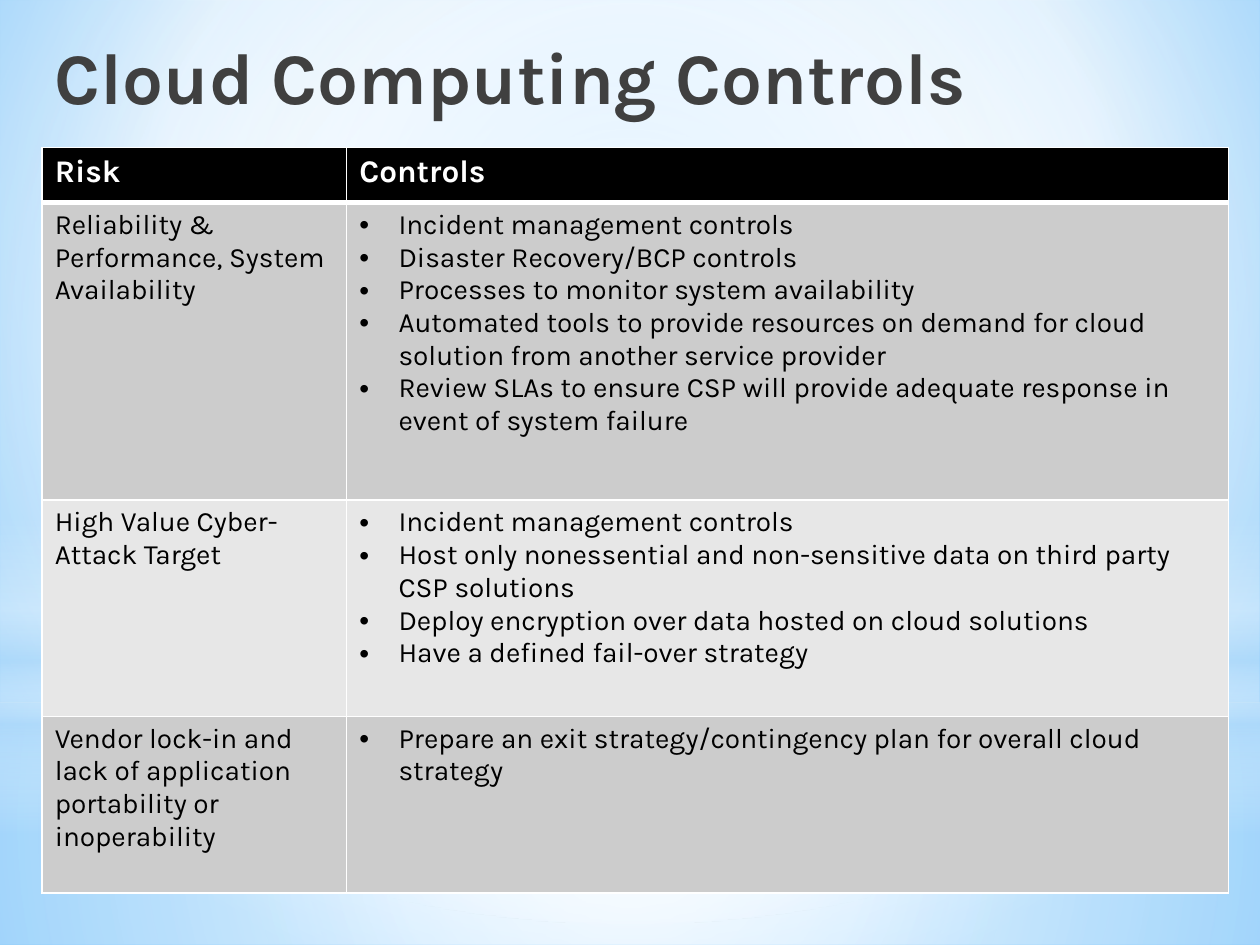
import pptx
import pptx.dml.color
import pptx.enum.shapes
import pptx.enum.text
import pptx.oxml
import pptx.oxml.ns
import pptx.util
from pptx.util import Cm

FONT = "Karla"
CENTRE = (50, 50, 50, 50)
SHAPES = pptx.enum.shapes.MSO_SHAPE
BACKDROP = [(0, "9ED5FF", 100), (60, "FFFFFF", 100), (100, "5BB9FF", 100)]
GLOWS = [
    (SHAPES.RECTANGLE, 14.17, 4.88, CENTRE,
     [(0, "FFFFFF", 91), (37, "FFFFFF", 76), (100, "B4DCFA", 79)]),
    (SHAPES.RECTANGLE, 0, 14.17, CENTRE,
     [(0, "FFFFFF", 89), (48, "FFFFFF", 62), (100, "B4DCFA", 79)]),
    (SHAPES.RECTANGLE, 10.46, 6.35, None,
     [(0, "FFFFFF", 0), (29, "FFFFFF", 30), (45, "B4DCFA", 40),
      (55, "FFFFFF", 26), (65, "B4DCFA", 60), (100, "FFFFFF", 0)]),
    (SHAPES.OVAL, 4.45, 14.17, CENTRE,
     [(0, "FFFFFF", 100), (56, "FFFFFF", 0)]),
]
COLUMN_WIDTHS = [6.14, 17.78]
ROW_HEIGHTS = [1.11, 6, 4.36, 3.56]
RISKS = [
    ("Reliability & Performance, System Availability", [
        "Incident management controls",
        "Disaster Recovery/BCP controls",
        "Processes to monitor system availability",
        "Automated tools to provide resources on demand for cloud solution "
        "from another service provider",
        "Review SLAs to ensure CSP will provide adequate response in event "
        "of system failure",
    ]),
    ("High Value Cyber-Attack Target", [
        "Incident management controls",
        "Host only nonessential and non-sensitive data on third party CSP solutions",
        "Deploy encryption over data hosted on cloud solutions",
        "Have a defined fail-over strategy",
    ]),
    ("Vendor lock-in and lack of application portability or inoperability", [
        "Prepare an exit strategy/contingency plan for overall cloud strategy",
    ]),
]


def rgb(value):
    return pptx.dml.color.RGBColor.from_string(value)


def parse_drawing(tag, content, attributes=""):
    namespace = pptx.oxml.ns.nsdecls("a")
    return pptx.oxml.parse_xml(f"<a:{tag} {namespace} {attributes}>{content}</a:{tag}>")


def set_gradient(fill, owner, stops, focus=None):
    fill.solid()
    solid = next(owner.iter(pptx.oxml.ns.qn("a:solidFill")))
    stop_list = "".join(
        f'<a:gs pos="{position * 1000}"><a:srgbClr val="{colour}">'
        f'<a:alpha val="{opacity * 1000}"/></a:srgbClr></a:gs>'
        for position, colour, opacity in stops)
    if focus:
        sides = " ".join(f'{side}="{share * 1000}"' for side, share in zip("ltrb", focus))
        direction = f'<a:path path="circle"><a:fillToRect {sides}/></a:path>'
    else:
        direction = '<a:lin ang="5400000" scaled="0"/>'
    gradient = parse_drawing("gradFill", f"<a:gsLst>{stop_list}</a:gsLst>{direction}",
                             'rotWithShape="1"')
    solid.getparent().replace(solid, gradient)


def add_glow(slide, outline, top, height, focus, stops):
    glow = slide.shapes.add_shape(outline, Cm(0), Cm(top), Cm(25.4), Cm(height))
    glow.shadow.inherit = False
    glow.line.fill.background()
    set_gradient(glow.fill, glow.element, stops, focus)


def write_text(paragraph, text, size=16, colour="000000", bold=False, bullet=False):
    run = paragraph.add_run()
    run.text = text
    run.font.name = FONT
    run.font.size = pptx.util.Pt(size)
    run.font.bold = bold
    run.font.color.rgb = rgb(colour)
    paragraph.alignment = pptx.enum.text.PP_ALIGN.LEFT
    if bullet:
        properties = paragraph._p.get_or_add_pPr()
        properties.set("marL", str(Cm(0.79)))
        properties.set("indent", str(-Cm(0.79)))
        properties.append(parse_drawing("buFont", "", 'typeface="Arial"'))
        properties.append(parse_drawing("buChar", "", 'char="•"'))


def fill_cell(cell, lines, fill, bottom_width=1, **text_format):
    properties = cell._tc.get_or_add_tcPr()
    for side in "LRTB":
        width = pptx.util.Pt(bottom_width if side == "B" else 1)
        properties.append(parse_drawing(
            f"ln{side}", '<a:solidFill><a:srgbClr val="FFFFFF"/></a:solidFill>',
            f'w="{width}"'))
    cell.fill.solid()
    cell.fill.fore_color.rgb = rgb(fill)
    frame = cell.text_frame
    for index, line in enumerate(lines):
        paragraph = frame.add_paragraph() if index else frame.paragraphs[0]
        write_text(paragraph, line, **text_format)


def add_controls_table(slide):
    table = slide.shapes.add_table(
        len(ROW_HEIGHTS), len(COLUMN_WIDTHS), Cm(0.85), Cm(2.97),
        Cm(sum(COLUMN_WIDTHS)), Cm(sum(ROW_HEIGHTS))).table
    for column, width in zip(table.columns, COLUMN_WIDTHS):
        column.width = Cm(width)
    for row, height in zip(table.rows, ROW_HEIGHTS):
        row.height = Cm(height)
    for column, heading in enumerate(["Risk", "Controls"]):
        fill_cell(table.cell(0, column), [heading], "000000", bottom_width=3,
                  size=18, colour="FFFFFF", bold=True)
    for row, (risk, controls) in enumerate(RISKS, start=1):
        band = "CCCCCC" if row % 2 else "E7E7E7"
        fill_cell(table.cell(row, 0), [risk], band)
        fill_cell(table.cell(row, 1), controls, band, bullet=True)


def place_title(slide):
    title = slide.shapes.title
    title.left, title.top = Cm(0.85), Cm(0.42)
    title.width, title.height = Cm(19.05), Cm(3.18)
    frame = title.text_frame
    frame.auto_size = pptx.enum.text.MSO_AUTO_SIZE.NONE
    frame.vertical_anchor = pptx.enum.text.MSO_ANCHOR.TOP
    frame.margin_top = Cm(0.23)
    write_text(frame.paragraphs[0], "Cloud Computing Controls",
               size=41.4, colour="404040", bold=True)
    title.element.getparent().append(title.element)


def main():
    deck = pptx.Presentation()
    deck.slide_width, deck.slide_height = Cm(25.4), Cm(19.05)
    slide = deck.slides.add_slide(deck.slide_layouts[5])
    set_gradient(slide.background.fill, slide.element, BACKDROP, (20, 10, 20, 60))
    for glow in GLOWS:
        add_glow(slide, *glow)
    add_controls_table(slide)
    place_title(slide)
    deck.save("out.pptx")


if __name__ == "__main__":
    main()
